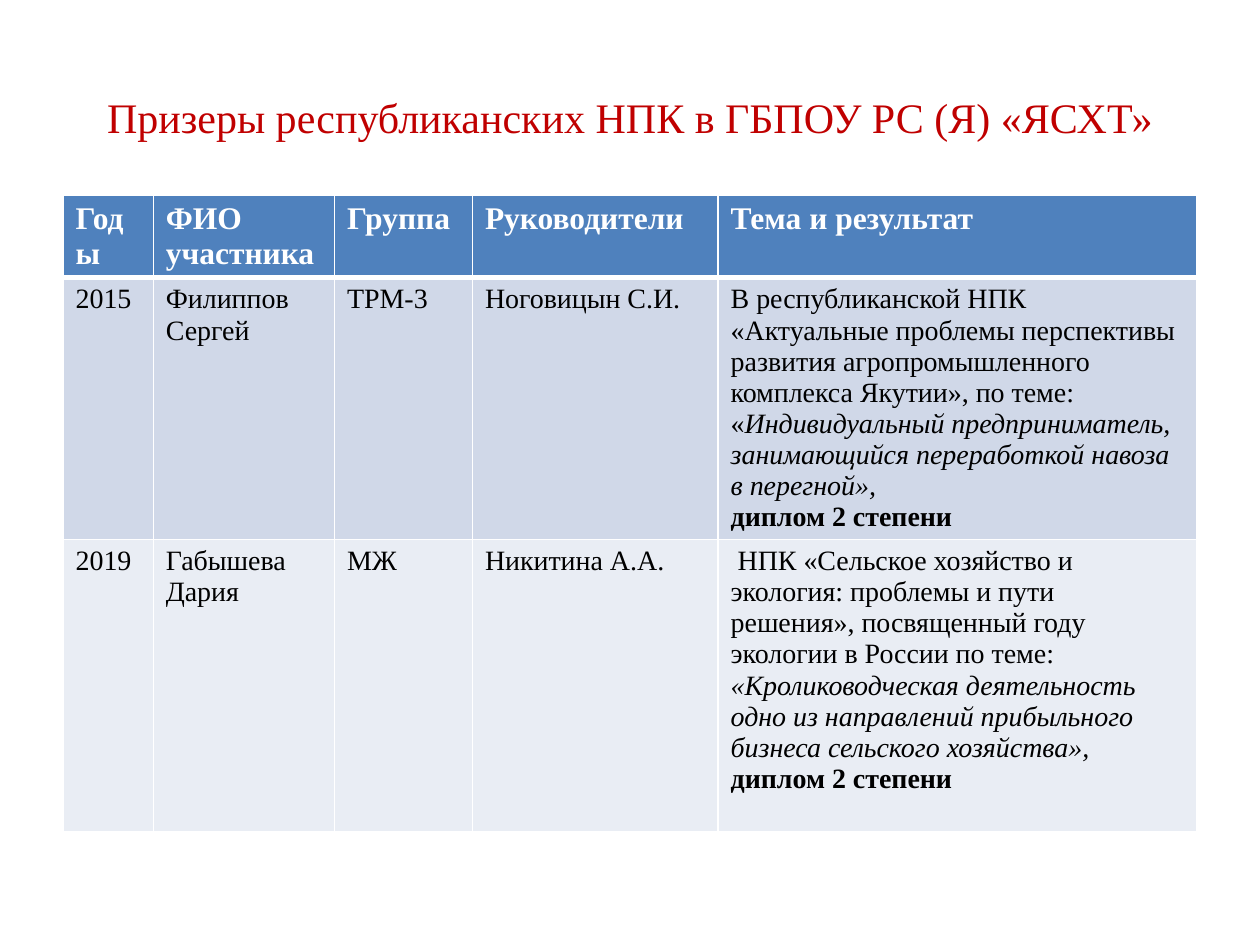
from copy import deepcopy
from dataclasses import dataclass

from lxml.etree import SubElement
from pptx import Presentation
from pptx.dml.color import RGBColor
from pptx.enum.text import MSO_ANCHOR, PP_ALIGN
from pptx.oxml.ns import qn
from pptx.util import Pt

FONT = "Times New Roman"
RED = RGBColor(0xC0, 0x00, 0x00)
WHITE = RGBColor(0xFF, 0xFF, 0xFF)
BLACK = RGBColor(0x00, 0x00, 0x00)
BLUE = RGBColor(0x4F, 0x81, 0xBD)
BAND_DARK = RGBColor(0xD0, 0xD8, 0xE8)
BAND_LIGHT = RGBColor(0xE9, 0xED, 0xF4)

COL_WIDTHS = (51.6, 103.6, 78.8, 140.4, 273.6)
HEADERS = ("Годы", "ФИО участника", "Группа", "Руководители", "Тема и результат")


@dataclass(frozen=True)
class Winner:
    year: str
    name: str
    group: str
    leader: str
    event: str
    topic: str
    result: str
    height: float
    fill: RGBColor


WINNERS = (
    Winner(
        "2015", "Филиппов Сергей", "ТРМ-3", "Ноговицын С.И.",
        "В республиканской НПК «Актуальные проблемы перспективы развития "
        "агропромышленного комплекса Якутии», по теме: «",
        "Индивидуальный предприниматель, занимающийся переработкой навоза в перегной»,",
        "диплом 2 степени", 149.5, BAND_DARK,
    ),
    Winner(
        "2019", "Габышева Дария", "МЖ", "Никитина А.А.",
        " НПК «Сельское хозяйство и экология: проблемы и пути решения», "
        "посвященный году экологии в России по теме:\n",
        "«Кролиководческая деятельность одно из направлений прибыльного "
        "бизнеса сельского хозяйства»,",
        "диплом 2 степени", 167, BAND_LIGHT,
    ),
)


def add_text(p, text: str, *, size: float = 16, color: RGBColor = BLACK,
             bold: bool = False, italic: bool = False) -> None:
    r = p.add_run()
    r.text = text.rstrip("\n")
    r.font.name = FONT
    r.font.size = Pt(size)
    r.font.color.rgb = color
    r.font.bold = bold
    r.font.italic = italic
    if text.endswith("\n"):
        p.add_line_break()
        p._p[-1].append(deepcopy(r._r.rPr))


def style_cell(cell, fill: RGBColor, bottom: float = 1, top: float = 1) -> None:
    cell.fill.solid()
    cell.fill.fore_color.rgb = fill
    tc_pr = cell._tc.get_or_add_tcPr()
    borders = (("a:lnL", 1), ("a:lnR", 1), ("a:lnT", top), ("a:lnB", bottom))
    for i, (tag, width) in enumerate(borders):
        ln = SubElement(tc_pr, qn(tag), w=str(Pt(width)))
        SubElement(SubElement(ln, qn("a:solidFill")), qn("a:srgbClr"), val=str(WHITE))
        tc_pr.insert(i, ln)


def fill_header(table) -> None:
    table.rows[0].height = Pt(46.5)
    for cell, text in zip(table.rows[0].cells, HEADERS):
        style_cell(cell, BLUE, bottom=3)
        add_text(cell.text_frame.paragraphs[0], text, size=18, color=WHITE, bold=True)


def fill_winner(table, row: int, winner: Winner) -> None:
    table.rows[row].height = Pt(winner.height)
    cells = list(table.rows[row].cells)
    for cell in cells:
        style_cell(cell, winner.fill, top=3 if row == 1 else 1)
    texts = (winner.year, winner.name, winner.group, winner.leader, winner.event)
    for cell, text in zip(cells, texts):
        add_text(cell.text_frame.paragraphs[0], text)
    tf = cells[-1].text_frame
    add_text(tf.paragraphs[0], winner.topic, italic=True)
    add_text(tf.add_paragraph(), winner.result, bold=True)


def main() -> None:
    prs = Presentation()
    prs.slide_width, prs.slide_height = Pt(720), Pt(540)
    s = prs.slides.add_slide(prs.slide_layouts[5])

    title = s.shapes.title
    title.left, title.top, title.width, title.height = Pt(36), Pt(21.6), Pt(648), Pt(90)
    tf = title.text_frame
    tf.word_wrap = True
    tf.vertical_anchor = MSO_ANCHOR.MIDDLE
    p = tf.paragraphs[0]
    p.alignment = PP_ALIGN.CENTER
    add_text(p, "Призеры республиканских НПК в ГБПОУ РС (Я) «ЯСХТ»", size=24, color=RED)

    table = s.shapes.add_table(len(WINNERS) + 1, len(HEADERS),
                               Pt(36), Pt(111.6), Pt(648), Pt(363)).table
    for column, width in zip(table.columns, COL_WIDTHS):
        column.width = Pt(width)
    fill_header(table)
    for row, winner in enumerate(WINNERS, start=1):
        fill_winner(table, row, winner)

    prs.save("out.pptx")


if __name__ == "__main__":
    main()
